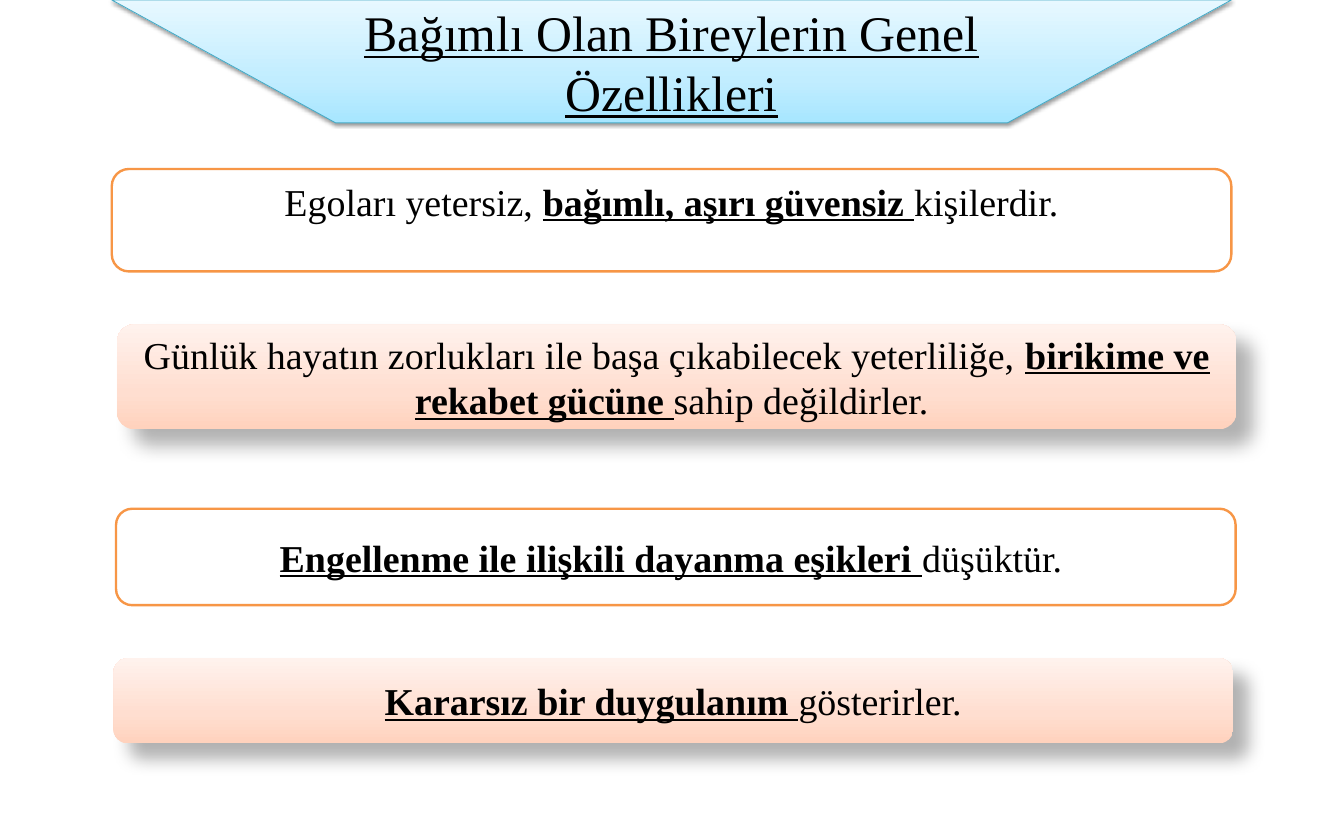
"""Slide listing the general traits of dependent individuals."""
from lxml import etree
from pptx import Presentation
from pptx.dml.color import RGBColor
from pptx.enum import shapes, text
from pptx.oxml import ns
from pptx.util import Inches, Pt

BLUE = [(0, "A7E6FF"), (35, "C1EDFF"), (100, "E7F8FF")]
PEACH = [(0, "FFD2BD"), (35, "FFDED0"), (100, "FFF2ED")]
TITLE_SHADOW = (38, 3.1, 1.6, 90)
CARD_SHADOW = (30, 15, 18, 45)
BANNER = shapes.MSO_SHAPE.FLOWCHART_MANUAL_OPERATION
CARD = shapes.MSO_SHAPE.ROUNDED_RECTANGLE
MIDDLE, TOP = text.MSO_ANCHOR.MIDDLE, text.MSO_ANCHOR.TOP


def color(value):
    return RGBColor.from_string(value)


def add_node(parent, tag, **attributes):
    return etree.SubElement(parent, ns.qn(tag), {k: str(v) for k, v in attributes.items()})


deck = Presentation()
deck.slide_width, deck.slide_height = Inches(15.75), Inches(9.84)
slide = deck.slides.add_slide(deck.slide_layouts[6])

panels = [
    (BANNER, 1.31, 0, 1.44, BLUE, ("46AAC5", 0.75), TITLE_SHADOW, MIDDLE, 42,
     [("Bağımlı Olan Bireylerin Genel Özellikleri", False, True)]),
    (CARD, 1.31, 1.98, 1.2, None, ("F79646", 2), None, TOP, 32,
     [("Egoları yetersiz, ", False, False),
      ("bağımlı, aşırı güvensiz ", True, True),
      ("kişilerdir.", False, False)]),
    (CARD, 1.33, 7.71, 1, PEACH, None, CARD_SHADOW, MIDDLE, 32,
     [("Kararsız bir duygulanım ", True, True),
      ("gösterirler.", False, False)]),
    (CARD, 1.37, 3.8, 1.23, PEACH, None, CARD_SHADOW, MIDDLE, 32,
     [("Günlük hayatın zorlukları ile başa çıkabilecek yeterliliğe, ", False, False),
      ("birikime ve rekabet gücüne ", True, True),
      ("sahip değildirler. ", False, False)]),
    (CARD, 1.36, 5.96, 1.13, None, ("F79646", 2), None, MIDDLE, 32,
     [("Engellenme ile ilişkili dayanma eşikleri ", True, True),
      ("düşüktür. ", False, False)]),
]

for kind, left, top, height, gradient, outline, shadow, anchor, size, phrases in panels:
    panel = slide.shapes.add_shape(kind, Inches(left), Inches(top), Inches(13.12), Inches(height))
    properties = panel.element.spPr
    if gradient:
        blend = add_node(properties, "a:gradFill", rotWithShape=1)
        stops = add_node(blend, "a:gsLst")
        for position, tint in gradient:
            stop = add_node(stops, "a:gs", pos=position * 1000)
            add_node(stop, "a:srgbClr", val=tint)
        add_node(blend, "a:lin", ang=270 * 60000, scaled=1)
    else:
        panel.fill.solid()
        panel.fill.fore_color.rgb = color("FFFFFF")

    if outline:
        panel.line.color.rgb = color(outline[0])
        panel.line.width = Pt(outline[1])
    else:
        panel.line.fill.background()

    panel.shadow.inherit = False
    if shadow:
        opacity, blur, distance, angle = shadow
        cast = add_node(properties.find(ns.qn("a:effectLst")), "a:outerShdw",
                        blurRad=Pt(blur), dist=Pt(distance), dir=angle * 60000,
                        algn="tl", rotWithShape=0)
        add_node(add_node(cast, "a:srgbClr", val="000000"), "a:alpha", val=opacity * 1000)

    frame = panel.text_frame
    frame.word_wrap = True
    frame.vertical_anchor = anchor
    sentence = frame.paragraphs[0]
    sentence.alignment = text.PP_ALIGN.CENTER
    for wording, bold, underline in phrases:
        run = sentence.add_run()
        run.text = wording
        run.font.name = "Times New Roman"
        run.font.size = Pt(size)
        run.font.bold = bold
        run.font.underline = underline
        run.font.color.rgb = color("000000")

deck.save("out.pptx")
